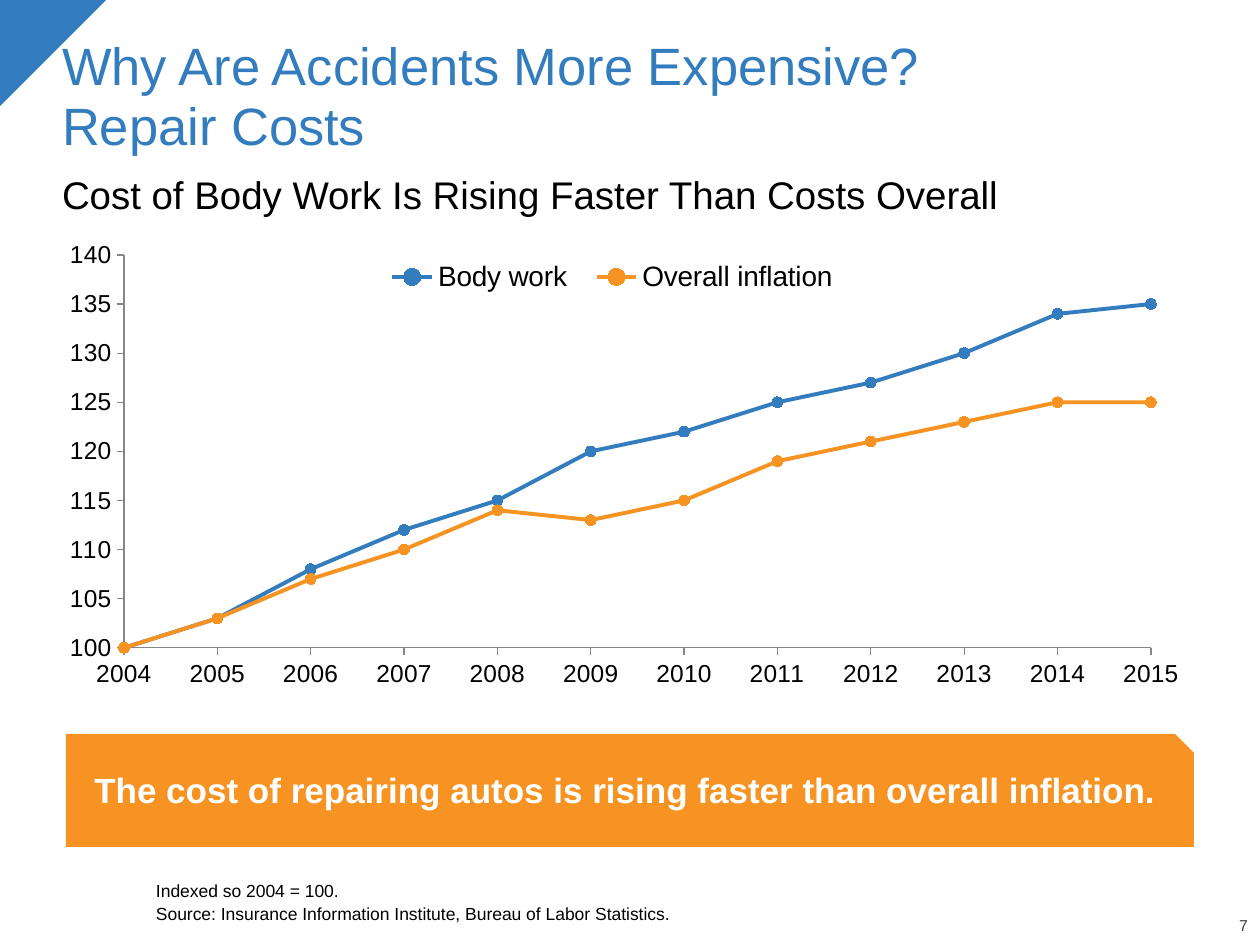
from lxml.etree import SubElement
from pptx import Presentation
from pptx.chart.data import CategoryChartData
from pptx.dml.color import RGBColor
from pptx.enum.chart import XL_CHART_TYPE, XL_LEGEND_POSITION, XL_MARKER_STYLE, XL_TICK_MARK
from pptx.enum.shapes import MSO_SHAPE
from pptx.enum.text import MSO_ANCHOR, MSO_AUTO_SIZE, PP_ALIGN
from pptx.oxml.ns import qn
from pptx.util import Emu, Pt

THEME = {
    "font": "Arial",
    "blue": RGBColor.from_string("337DBE"),
    "marker_blue": RGBColor.from_string("2F72AD"),
    "orange": RGBColor.from_string("F69322"),
    "black": RGBColor.from_string("000000"),
    "white": RGBColor.from_string("FFFFFF"),
    "gray": RGBColor.from_string("404040"),
    "axis": RGBColor.from_string("868686"),
    "title": Pt(30),
    "subtitle": Pt(22),
    "message": Pt(20),
    "legend": Pt(16),
    "ticks": Pt(14),
    "note": Pt(10),
    "number": Pt(9),
}
SCALE = 914400 / 126


def place(*lengths):
    return [Emu(round(length * SCALE)) for length in lengths]


def write(shape, text, size, color, anchor=MSO_ANCHOR.MIDDLE, align=PP_ALIGN.LEFT,
          insets=(13, 6, 13, 6), spacing=0.9, gap=0, bold=False):
    frame = shape.text_frame
    left, top, right, bottom = place(*insets)
    frame_format = {
        "word_wrap": True, "auto_size": MSO_AUTO_SIZE.NONE, "vertical_anchor": anchor,
        "margin_left": left, "margin_top": top, "margin_right": right, "margin_bottom": bottom,
    }
    for key, value in frame_format.items():
        setattr(frame, key, value)
    frame.text = text
    for index, paragraph in enumerate(frame.paragraphs):
        paragraph.alignment = align
        paragraph.line_spacing = spacing
        paragraph.space_before = Pt(gap if index else 0)
        for run in paragraph.runs:
            font_format = {"name": THEME["font"], "size": THEME[size], "bold": bold}
            for key, value in font_format.items():
                setattr(run.font, key, value)
            run.font.color.rgb = THEME[color]


deck = Presentation()
deck.slide_width, deck.slide_height = place(1260, 945)
slide = deck.slides.add_slide(deck.slide_layouts[5])
shapes = slide.shapes

title = shapes.title
title.left, title.top, title.width, title.height = place(49, 32, 1101, 131)
write(title, "Why Are Accidents More Expensive?\vRepair Costs", "title", "blue", spacing=0.95)

corner = shapes.add_shape(MSO_SHAPE.RIGHT_TRIANGLE, *place(0, 0, 106, 106))
corner.rotation = 90
message = shapes.add_shape(MSO_SHAPE.SNIP_1_RECTANGLE, *place(66, 734, 1128, 113))
for panel, color in ((corner, "blue"), (message, "orange")):
    panel.shadow.inherit = False
    panel.fill.solid()
    panel.fill.fore_color.rgb = THEME[color]
    panel.line.fill.background()
write(message, "The cost of repairing autos is rising faster than overall inflation.",
      "message", "white", align=PP_ALIGN.CENTER, insets=(13, 6, 13, 13), bold=True)

subtitle = shapes.add_textbox(*place(49, 170, 1166, 54))
write(subtitle, "Cost of Body Work Is Rising Faster Than Costs Overall", "subtitle", "black")

source_note = shapes.add_textbox(*place(156, 867, 1058, 57))
write(source_note,
      "Indexed so 2004 = 100.\n"
      "Source: Insurance Information Institute, Bureau of Labor Statistics.",
      "note", "black", anchor=MSO_ANCHOR.BOTTOM, insets=(0, 0, 0, 0), gap=2)

page_number = shapes.add_textbox(*place(1188, 919, 60, 16))
write(page_number, "7", "number", "gray", anchor=MSO_ANCHOR.BOTTOM,
      align=PP_ALIGN.RIGHT, insets=(0, 0, 0, 0))

costs = CategoryChartData(number_format="#,##0")
costs.categories = [str(year) for year in range(2004, 2016)]
costs.add_series("Body work", [100, 103, 108, 112, 115, 120, 122, 125, 127, 130, 134, 135])
costs.add_series("Overall inflation", [100, 103, 107, 110, 114, 113, 115, 119, 121, 123, 125, 125])
chart_width, chart_height = 1174, 475
chart = shapes.add_chart(
    XL_CHART_TYPE.LINE_MARKERS, *place(20, 234, chart_width, chart_height), costs).chart
chart.has_title = False
chart.has_legend = True
chart.font.name = THEME["font"]
chart.font.size = THEME["legend"]
chart.font.color.rgb = THEME["black"]
chart.legend.position = XL_LEGEND_POSITION.TOP
chart.legend.include_in_layout = True
chart.legend.font.size = THEME["legend"]
chart.plots[0].vary_by_categories = False

years, cost_index = chart.category_axis, chart.value_axis
index_format = {"minimum_scale": 100, "maximum_scale": 140, "major_unit": 5}
for key, value in index_format.items():
    setattr(cost_index, key, value)
cost_index.tick_labels.number_format = "#,##0"
cost_index.tick_labels.number_format_is_linked = False
for axis in (years, cost_index):
    axis.has_major_gridlines = False
    axis.major_tick_mark = XL_TICK_MARK.OUTSIDE
    axis.minor_tick_mark = XL_TICK_MARK.NONE
    axis.tick_labels.font.size = THEME["ticks"]
    axis.format.line.color.rgb = THEME["axis"]
    axis.format.line.width = Pt(0.75)

series_colors = (("blue", "marker_blue"), ("orange", "orange"))
for series, (line_color, marker_color) in zip(chart.plots[0].series, series_colors):
    series.smooth = False
    series.format.line.color.rgb = THEME[line_color]
    series.format.line.width = Pt(2.25)
    series.marker.style = XL_MARKER_STYLE.CIRCLE
    series.marker.size = 6
    series.marker.format.fill.solid()
    series.marker.format.fill.fore_color.rgb = THEME[marker_color]
    series.marker.format.line.color.rgb = THEME[marker_color]

value_axis = chart.element.xpath(".//c:valAx")[0]
crossing = SubElement(value_axis, qn("c:crossBetween"))
crossing.set("val", "midCat")
value_axis.xpath("c:crossAx | c:crosses")[-1].addnext(crossing)

layouts = (
    ("c:plotArea", 0, {"layoutTarget": "inner"}, (104, 21, 1027, 393)),
    ("c:legend", 1, {}, (352, 24, 481, 38)),
)
for tag, position, target, (x, y, width, height) in layouts:
    area = chart.element.xpath(f".//{tag}")[0]
    for old_layout in area.findall(qn("c:layout")):
        area.remove(old_layout)
    layout = SubElement(area, qn("c:layout"))
    area.insert(position, layout)
    manual = SubElement(layout, qn("c:manualLayout"))
    settings = target | {
        "xMode": "edge", "yMode": "edge", "x": x / chart_width, "y": y / chart_height,
        "w": width / chart_width, "h": height / chart_height,
    }
    for key, value in settings.items():
        SubElement(manual, qn(f"c:{key}")).set("val", str(value))

deck.save("out.pptx")
